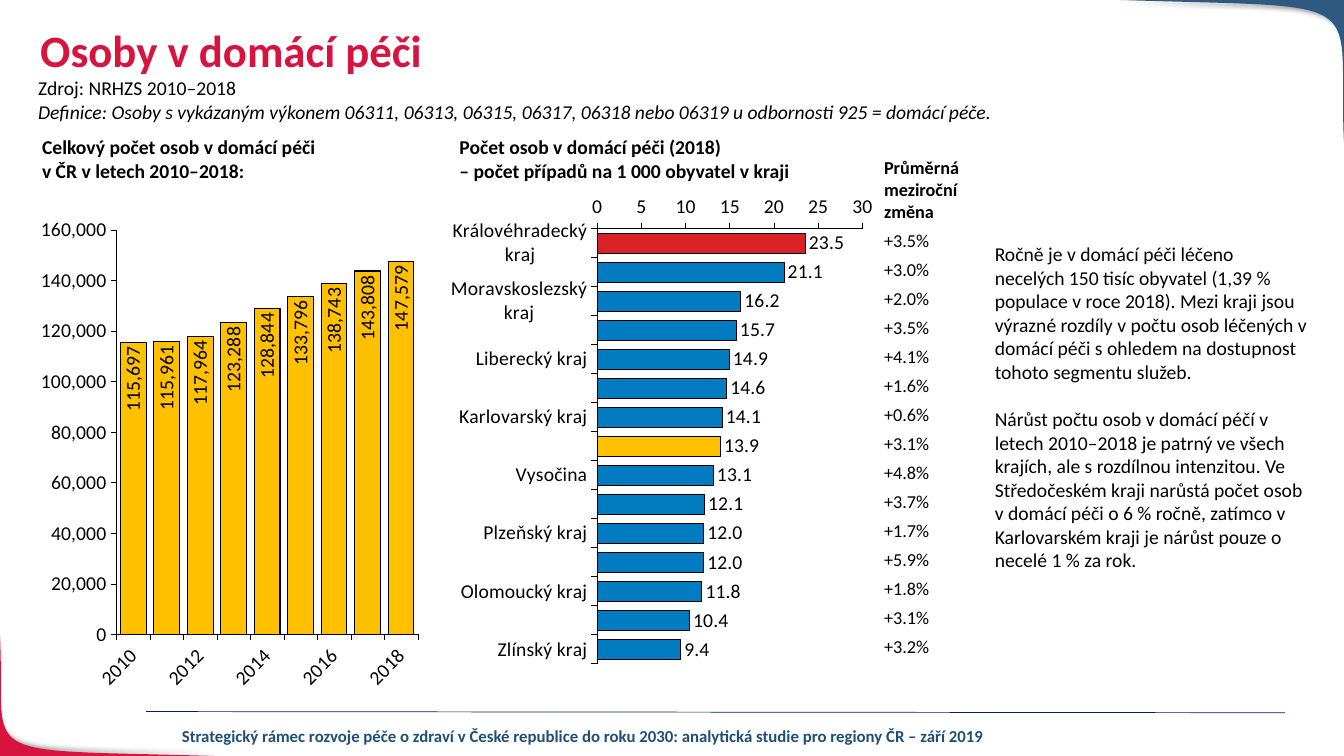
from lxml import etree
from pptx import Presentation
from pptx.chart.data import CategoryChartData
from pptx.dml.color import RGBColor
from pptx.enum.chart import XL_CHART_TYPE, XL_LABEL_POSITION, XL_TICK_MARK
from pptx.enum.shapes import MSO_CONNECTOR
from pptx.enum.text import MSO_ANCHOR, MSO_AUTO_SIZE, PP_ALIGN
from pptx.oxml.ns import qn
from pptx.util import Cm, Pt

COLUMNS = XL_CHART_TYPE.COLUMN_CLUSTERED
BARS = XL_CHART_TYPE.BAR_CLUSTERED
INSIDE_END = XL_LABEL_POSITION.INSIDE_END
OUTSIDE_END = XL_LABEL_POSITION.OUTSIDE_END
TICK_OUT, TICK_NONE = XL_TICK_MARK.OUTSIDE, XL_TICK_MARK.NONE
LEFT, CENTER = PP_ALIGN.LEFT, PP_ALIGN.CENTER
TOP, MIDDLE, BOTTOM = MSO_ANCHOR.TOP, MSO_ANCHOR.MIDDLE, MSO_ANCHOR.BOTTOM

COLORS = {
    "text": "000000", "red": "D71440", "corner_blue": "2E5980", "rule": "002060",
    "footer": "1F4E79", "yellow": "FFC000", "bar_blue": "037BC1", "bar_red": "DA2128",
}
FONT = "Calibri"
WIDTH, HEIGHT = 33.87, 19.05

YEARS = [str(year) for year in range(2010, 2019)]
PERSONS = [115697, 115961, 117964, 123288, 128844, 133796, 138743, 143808, 147579]
REGIONS = [
    ("Královéhradecký kraj", 23.5, "+3.5%"), ("Pardubický kraj", 21.1, "+3.0%"),
    ("Moravskoslezský kraj", 16.2, "+2.0%"), ("Ústecký kraj", 15.7, "+3.5%"),
    ("Liberecký kraj", 14.9, "+4.1%"), ("Jihočeský kraj", 14.6, "+1.6%"),
    ("Karlovarský kraj", 14.1, "+0.6%"), ("Česká republika", 13.9, "+3.1%"),
    ("Vysočina", 13.1, "+4.8%"), ("Jihomoravský kraj", 12.1, "+3.7%"),
    ("Plzeňský kraj", 12.0, "+1.7%"), ("Středočeský kraj", 12.0, "+5.9%"),
    ("Olomoucký kraj", 11.8, "+1.8%"), ("Hlavní město Praha", 10.4, "+3.1%"),
    ("Zlínský kraj", 9.4, "+3.2%"),
]
COMMENTARY = [
    "Ročně je v domácí péči léčeno necelých 150 tisíc obyvatel (1,39 % populace v roce 2018). "
    "Mezi kraji jsou výrazné rozdíly v počtu osob léčených v domácí péči s ohledem na "
    "dostupnost tohoto segmentu služeb.",
    "Nárůst počtu osob v domácí péčí v letech 2010–2018 je patrný ve všech krajích, ale "
    "s rozdílnou intenzitou. Ve Středočeském kraji narůstá počet osob v domácí péči o 6 % "
    "ročně, zatímco v Karlovarském kraji je nárůst pouze o necelé 1 % za rok.",
]


def rgb(name):
    return RGBColor.from_string(COLORS[name])


def cm(box):
    return [Cm(length) for length in box]


def set_font(font, color="text", **formats):
    for name, value in {"name": FONT, "size": Pt(14), **formats}.items():
        setattr(font, name, value)
    font.color.rgb = rgb(color)


def add_text(page, box, lines, anchor=TOP, align=LEFT, gap=0, **formats):
    frame = page.shapes.add_textbox(*cm(box)).text_frame
    frame.word_wrap = True
    frame.vertical_anchor = anchor
    for index, line in enumerate(lines):
        para = frame.add_paragraph() if index else frame.paragraphs[0]
        para.text = line
        para.alignment = align
        if index:
            para.space_before = Pt(gap)
        set_font(para.font, **formats)
    return frame


def add_corner(page, box, color, turned=False):
    """Fill the corner outside a curve; turned swaps top right for bottom left."""
    left, top, width, height = box
    steps = 40
    curve = []
    for step in range(steps + 1):
        t = step / steps
        u = 1 - t
        curve.append((3 * u * u * t * 1.16 + 3 * u * t * t * 0.97 + t ** 3,
                      3 * u * u * t * 0.06 - 3 * u * t * t * 0.06 + t ** 3))
    outline = curve + [(1, 0)]
    if turned:
        outline = [(1 - x, 1 - y) for x, y in outline]
    points = [(Cm(left + x * width), Cm(top + y * height)) for x, y in outline]
    builder = page.shapes.build_freeform(*points[0])
    builder.add_line_segments(points[1:])
    corner = builder.convert_to_shape()
    corner.fill.solid()
    corner.fill.fore_color.rgb = rgb(color)
    corner.line.fill.background()
    corner.shadow.inherit = False
    effects = next(corner._element.iter(qn("a:effectLst")))
    direction = 225 if turned else 45
    shadow = etree.SubElement(effects, qn("a:outerShdw"), blurRad=str(Pt(4)), dist=str(Pt(3)),
                              dir=str(direction * 60000), algn="tl", rotWithShape="0")
    shade = etree.SubElement(shadow, qn("a:srgbClr"), val=COLORS["text"])
    etree.SubElement(shade, qn("a:alpha"), val="40000")


def add_footer(page, box):
    left, top, width, height = box
    rule = page.shapes.add_connector(
        MSO_CONNECTOR.STRAIGHT, *cm((left, top, left + width, top + 0.03)))
    rule.line.color.rgb = rgb("rule")
    rule.line.width = Pt(0.5)
    etree.SubElement(rule._element.spPr, qn("a:effectLst"))
    add_text(page, (left + 0.59, top + 0.23, 20.85, height - 0.23),
             ["Strategický rámec rozvoje péče o zdraví v České republice do roku 2030: "
              "analytická studie pro regiony ČR – září 2019"],
             align=CENTER, color="footer", size=Pt(12), bold=True)


def add_title(page, box):
    title = page.shapes.title
    title.left, title.top, title.width, title.height = cm(box)
    frame = title.text_frame
    frame.text = "Osoby v domácí péči"
    frame.auto_size = MSO_AUTO_SIZE.NONE
    frame.vertical_anchor = MIDDLE
    para = frame.paragraphs[0]
    para.alignment = LEFT
    para.line_spacing = 0.9
    set_font(para.font, "red", size=Pt(32), bold=True)


def rotate_text(element, degrees):
    next(element.iter(qn("a:bodyPr"))).set("rot", str(degrees * 60000))


def set_plot_box(chart, fractions):
    area = next(chart._chartSpace.iter(qn("c:plotArea")))
    for old in area.findall(qn("c:layout")):
        area.remove(old)
    layout = etree.Element(qn("c:layout"))
    area.insert(0, layout)
    manual = etree.SubElement(layout, qn("c:manualLayout"))
    values = {"layoutTarget": "inner", "xMode": "edge", "yMode": "edge",
              **dict(zip("xywh", fractions))}
    for tag, value in values.items():
        etree.SubElement(manual, qn(f"c:{tag}"), val=str(value))


def add_bars(page, box, kind, categories, values, color, plot_box, gap, edge, axis_edge,
             label_format, label_position):
    data = CategoryChartData()
    data.categories = categories
    data.add_series("Series 1", values)
    chart = page.shapes.add_chart(kind, *cm(box), data).chart
    chart.has_legend = chart.has_title = False
    set_font(chart.font)
    set_plot_box(chart, plot_box)
    for axis in (chart.category_axis, chart.value_axis):
        axis.has_major_gridlines = False
        axis.major_tick_mark, axis.minor_tick_mark = TICK_OUT, TICK_NONE
        axis.format.line.color.rgb = rgb("text")
        axis.format.line.width = Pt(axis_edge)
        set_font(axis.tick_labels.font)
    chart.value_axis.minimum_scale = 0
    chart.value_axis.tick_labels.number_format = "#,##0"
    chart.value_axis.tick_labels.number_format_is_linked = False
    plot = chart.plots[0]
    plot.vary_by_categories = False
    plot.gap_width = gap
    bars = plot.series[0]
    bars.format.fill.solid()
    bars.format.fill.fore_color.rgb = rgb(color)
    bars.format.line.color.rgb = rgb("text")
    bars.format.line.width = Pt(edge)
    plot.has_data_labels = True
    labels = plot.data_labels
    set_font(labels.font)
    formats = {"show_value": True, "number_format": label_format,
               "number_format_is_linked": False, "position": label_position}
    for name, value in formats.items():
        setattr(labels, name, value)
    return chart


def add_year_chart(page, box):
    chart = add_bars(page, box, COLUMNS, YEARS, PERSONS, "yellow", (0.214, 0.028, 0.765, 0.839),
                     30, 0.75, 0.32, "#,##0", INSIDE_END)
    rotate_text(chart.plots[0].data_labels._element, -90)
    rotate_text(chart.category_axis._element, -45)


def add_region_chart(page, box):
    names, rates, _ = zip(*REGIONS)
    chart = add_bars(page, box, BARS, names, rates, "bar_blue", (0.341, 0.156, 0.612, 0.822),
                     50, 0.25, 0.75, "#,##0.0", OUTSIDE_END)
    chart.plots[0].overlap = 100
    chart.category_axis.reverse_order = True
    chart.value_axis.maximum_scale = 30
    highlights = {"Královéhradecký kraj": "bar_red", "Česká republika": "yellow"}
    for name, color in highlights.items():
        look = chart.plots[0].series[0].points[names.index(name)].format
        look.fill.solid()
        look.fill.fore_color.rgb = rgb(color)
        look.line.color.rgb = rgb("text")
        look.line.width = Pt(0.25)


def add_change_table(page, box):
    texts = ["Průměrná meziroční změna"] + [change for _, _, change in REGIONS]
    table = page.shapes.add_table(len(texts), 1, *cm(box)).table
    table.first_row = table.horz_banding = False
    for index, text in enumerate(texts):
        table.rows[index].height = Cm(0.73 if index else 1.8)
        cell = table.cell(index, 0)
        cell.fill.background()
        cell.vertical_anchor = BOTTOM
        cell.margin_left = cell.margin_right = cell.margin_top = Cm(0.03)
        cell.margin_bottom = 0
        cell.text = text
        set_font(cell.text_frame.paragraphs[0].font, size=Pt(13), bold=index == 0)


def main():
    deck = Presentation()
    deck.slide_width, deck.slide_height = Cm(WIDTH), Cm(HEIGHT)
    page = deck.slides.add_slide(deck.slide_layouts[5])
    add_corner(page, (0, HEIGHT - 3.05, 5.41, 3.05), "red", turned=True)
    add_corner(page, (WIDTH - 5.65, 0, 5.65, 3.61), "corner_blue")
    add_footer(page, (3.68, 17.93, 28.7, 0.99))
    add_title(page, (0.76, 0.46, 29.21, 1.75))
    source = add_text(page, (0.71, 1.8, 25.6, 1.45), [
        "Zdroj: NRHZS 2010–2018",
        "Definice: Osoby s vykázaným výkonem 06311, 06313, 06315, 06317, 06318 nebo 06319 "
        "u odbornosti 925 = domácí péče."])
    source.paragraphs[1].font.italic = True
    add_text(page, (0.81, 3.28, 10, 1.45),
             ["Celkový počet osob v domácí péči\vv ČR v letech 2010–2018:"], bold=True)
    add_text(page, (11.33, 3.28, 9.5, 1.45),
             ["Počet osob v domácí péči (2018)\v– počet případů na 1 000 obyvatel v kraji"],
             bold=True)
    add_year_chart(page, (0.81, 5.46, 9.93, 12.14))
    add_region_chart(page, (11.33, 3.68, 10.92, 13.34))
    add_change_table(page, (22.25, 3.84, 3.05, 12.75))
    add_text(page, (24.82, 4.65, 8.38, 11.2), COMMENTARY, anchor=MIDDLE, gap=17)
    deck.save("out.pptx")


if __name__ == "__main__":
    main()
